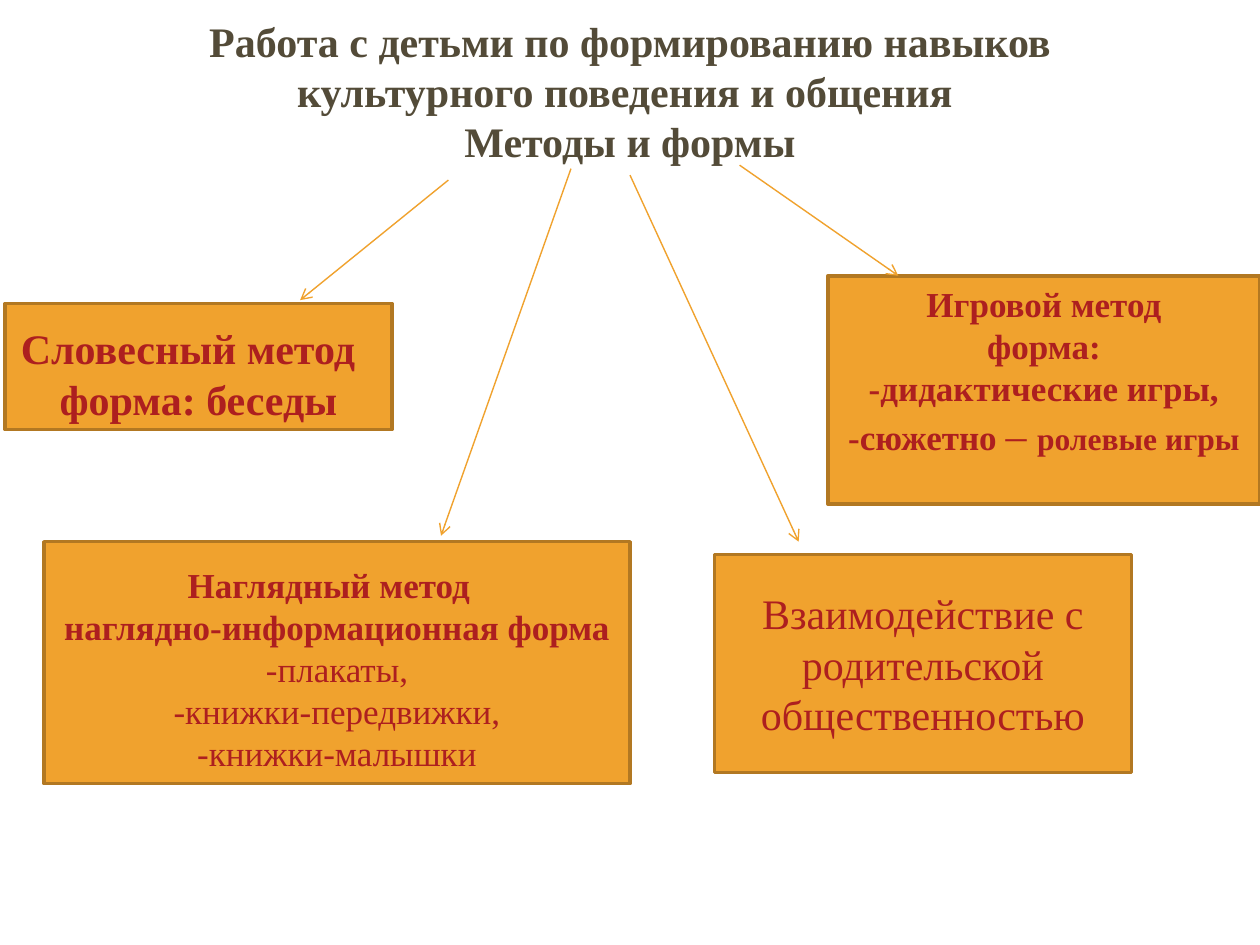
from lxml.etree import SubElement
from pptx import Presentation
from pptx.dml.color import RGBColor
from pptx.enum.shapes import MSO_CONNECTOR as CONNECTOR, MSO_SHAPE as SHAPE
from pptx.enum.text import MSO_ANCHOR as ANCHOR, PP_ALIGN as ALIGN
from pptx.oxml.ns import qn
from pptx.util import Cm, Pt

COLORS = {"title": "534B38", "text": "AD1F1F", "fill": "F0A22E", "border": "B27822"}
FONT = "Times New Roman"


def rgb(name):
    return RGBColor.from_string(COLORS[name])


def add_span(para, text, size=20, bold=True, color="text"):
    span = para.add_run()
    span.text = text
    span.font.name = FONT
    span.font.size = Pt(size)
    span.font.bold = bold
    span.font.color.rgb = rgb(color)


def write_paras(frame, paras, hang=0, **defaults):
    frame.word_wrap = True
    for index, spans in enumerate(paras):
        para = frame.paragraphs[0] if index == 0 else frame.add_paragraph()
        para.alignment = ALIGN.CENTER
        if hang and index:
            para._p.get_or_add_pPr().set("marL", str(Cm(hang)))
        for text, changes in spans:
            add_span(para, text, **{**defaults, **changes})


def add_title(page, place, paras):
    box = page.shapes.add_textbox(*map(Cm, place))
    write_paras(box.text_frame, paras, size=24, color="title")


def add_method(page, place, paras, top=0.13, bottom=0.13, hang=0, **defaults):
    box = page.shapes.add_shape(SHAPE.RECTANGLE, *map(Cm, place))
    box.shadow.inherit = False
    box.fill.solid()
    box.fill.fore_color.rgb = rgb("fill")
    box.line.color.rgb = rgb("border")
    box.line.width = Pt(2)
    frame = box.text_frame
    frame.vertical_anchor = ANCHOR.MIDDLE
    frame.margin_top, frame.margin_bottom = Cm(top), Cm(bottom)
    frame.margin_left = Cm(0 if hang else 0.25)
    frame.margin_right = Cm(hang or 0.25)
    write_paras(frame, paras, hang, **defaults)


def add_arrow(page, start, end):
    arrow = page.shapes.add_connector(CONNECTOR.STRAIGHT, *map(Cm, start + end))
    arrow.line.color.rgb = rgb("fill")
    arrow.line.width = Pt(0.79)
    SubElement(arrow.line._get_or_add_ln(), qn("a:tailEnd"), type="arrow")
    SubElement(arrow._element.spPr, qn("a:effectLst"))


def main():
    deck = Presentation()
    deck.slide_width, deck.slide_height = Cm(25.4), Cm(19.05)
    page = deck.slides.add_slide(deck.slide_layouts[6])

    add_title(page, (3.2, 0.18, 19, 3.33), [
        [("Работа с детьми по формированию навыков культурного поведения и общения ", {})],
        [("Методы и формы", {})],
    ])
    add_method(page, (0.1, 6.12, 7.8, 2.54), [
        [("Словесный метод", {})],
        [("форма: беседы", {})],
    ], top=0.26, bottom=0, hang=0.42, size=24)
    add_method(page, (16.69, 5.56, 8.71, 4.6), [
        [("Игровой метод", {})],
        [("форма:", {})],
        [("-дидактические игры,", {})],
        [("-сюжетно ", {}), ("– ", {"size": 24, "bold": False}),
         ("ролевые игры", {"size": 18})],
    ], bottom=0.89)
    add_method(page, (0.89, 10.92, 11.81, 4.88), [
        [("Наглядный метод", {})],
        [("наглядно-информационная форма", {})],
        [("-плакаты,", {"bold": False})],
        [("-книжки-передвижки,", {"bold": False})],
        [("-книжки-малышки", {"bold": False})],
    ], top=0.38, hang=0.33)
    add_method(page, (14.4, 11.18, 8.41, 4.39), [
        [("Взаимодействие с родительской общественностью", {})],
    ], size=24, bold=False)

    for start, end in (
        ((9.04, 3.63), (6.05, 6.05)),
        ((11.51, 3.4), (8.89, 10.8)),
        ((14.91, 3.33), (18.11, 5.56)),
        ((12.7, 3.53), (16.1, 10.92)),
    ):
        add_arrow(page, start, end)

    deck.save("out.pptx")


if __name__ == "__main__":
    main()
